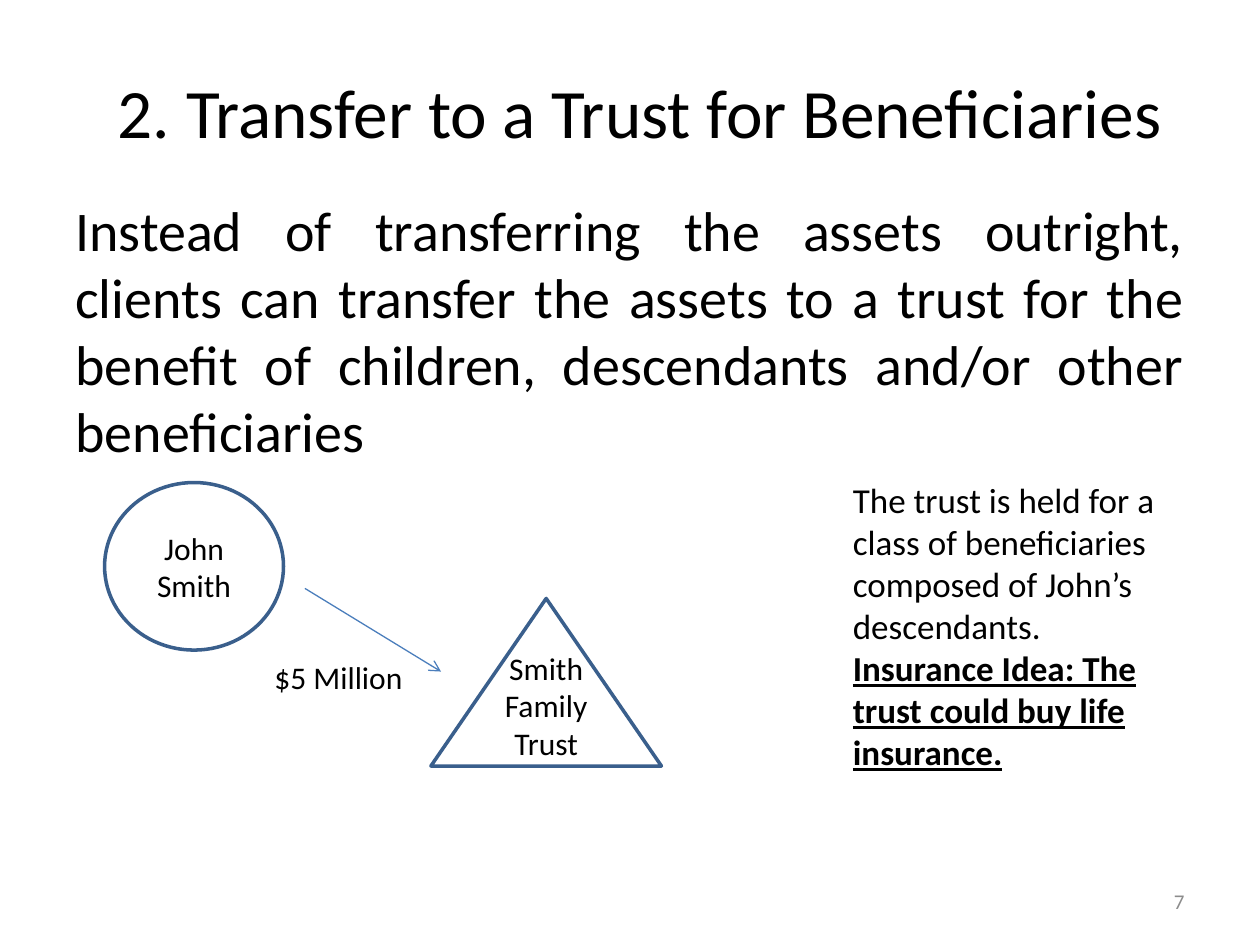
from lxml import etree
from pptx import Presentation
from pptx.dml.color import RGBColor
from pptx.enum.shapes import MSO_CONNECTOR, MSO_SHAPE
from pptx.enum.text import MSO_ANCHOR, PP_ALIGN
from pptx.oxml.ns import qn
from pptx.util import Inches, Pt

LEFT, CENTER, RIGHT, JUSTIFY = PP_ALIGN.LEFT, PP_ALIGN.CENTER, PP_ALIGN.RIGHT, PP_ALIGN.JUSTIFY
TOP, MIDDLE = MSO_ANCHOR.TOP, MSO_ANCHOR.MIDDLE
OVAL, TRIANGLE = MSO_SHAPE.OVAL, MSO_SHAPE.ISOSCELES_TRIANGLE
STRAIGHT = MSO_CONNECTOR.STRAIGHT

FONT = "Calibri"
COLORS = {"text": "000000", "number": "8C8C8C", "fill": "FFFFFF",
          "outline": "3A5F8C", "arrow": "4B7EBC"}


def rgb(name):
    return RGBColor.from_string(COLORS[name])


def write(sp, paragraphs, size, align=LEFT, anchor=TOP, color="text"):
    tf = sp.text_frame
    tf.word_wrap = True
    tf.vertical_anchor = anchor
    for i, (text, extra) in enumerate(paragraphs):
        p = tf.paragraphs[0] if i == 0 else tf.add_paragraph()
        p.alignment = align
        r = p.add_run()
        r.text = text
        formats = {"name": FONT, "size": Pt(size), **extra}
        for key, value in formats.items():
            setattr(r.font, key, value)
        r.font.color.rgb = rgb(color)


def add_text(slide, box, paragraphs, size, **style):
    sp = slide.shapes.add_textbox(*map(Inches, box))
    write(sp, paragraphs, size, **style)


def add_party(slide, kind, box, name, bottom=0.05):
    sp = slide.shapes.add_shape(kind, *map(Inches, box))
    sp.shadow.inherit = False
    sp.fill.solid()
    sp.fill.fore_color.rgb = rgb("fill")
    sp.line.color.rgb = rgb("outline")
    sp.line.width = Pt(2)
    sp.text_frame.margin_bottom = Inches(bottom)
    write(sp, [(name, {})], 18, align=CENTER, anchor=MIDDLE)


def add_arrow(slide, start, end):
    line = slide.shapes.add_connector(STRAIGHT, *map(Inches, start + end))
    line.line.color.rgb = rgb("arrow")
    line.line.width = Pt(0.75)
    etree.SubElement(line.line._get_or_add_ln(), qn("a:tailEnd"), type="arrow")
    etree.SubElement(line._element.spPr, qn("a:effectLst"))


def add_transfer_diagram(slide, box):
    x, y, w, h = box
    shape_h = 1.33
    trust_w = 1.83
    add_party(slide, OVAL, (x, y, 1.42, shape_h), "John Smith")
    add_party(slide, TRIANGLE, (x + w - trust_w, y + h - shape_h, trust_w, shape_h),
              "Smith Family Trust", bottom=0.35)
    add_arrow(slide, (x + 1.59, y + 0.84), (x + 2.67, y + 1.5))
    add_text(slide, (x + 1.25, y + 1.34, 1.58, 0.4), [("$5 Million", {})], 18)


def add_trust_note(slide, box):
    add_text(slide, box, [
        ("The trust is held for a class of beneficiaries composed of John’s descendants.", {}),
        ("Insurance Idea: The trust could buy life insurance.",
         {"bold": True, "underline": True}),
    ], 20)


def main():
    prs = Presentation()
    prs.slide_width, prs.slide_height = Inches(10), Inches(7.5)
    slide = prs.slides.add_slide(prs.slide_layouts[6])
    add_text(slide, (0.58, 0.25, 9, 1.25),
             [("2. Transfer to a Trust for Beneficiaries", {})],
             39.6, align=CENTER, anchor=MIDDLE)
    add_text(slide, (0.5, 1.5, 9, 5.37),
             [("Instead of transferring the assets outright, clients can transfer the "
               "assets to a trust for the benefit of children, descendants and/or other "
               "beneficiaries", {})],
             32, align=JUSTIFY)
    add_text(slide, (7.17, 6.95, 2.33, 0.4), [("7", {})], 12,
             align=RIGHT, anchor=MIDDLE, color="number")
    add_transfer_diagram(slide, (0.83, 3.83, 4.42, 2.25))
    add_trust_note(slide, (6.67, 3.75, 2.92, 2.46))
    prs.save("out.pptx")


if __name__ == "__main__":
    main()
